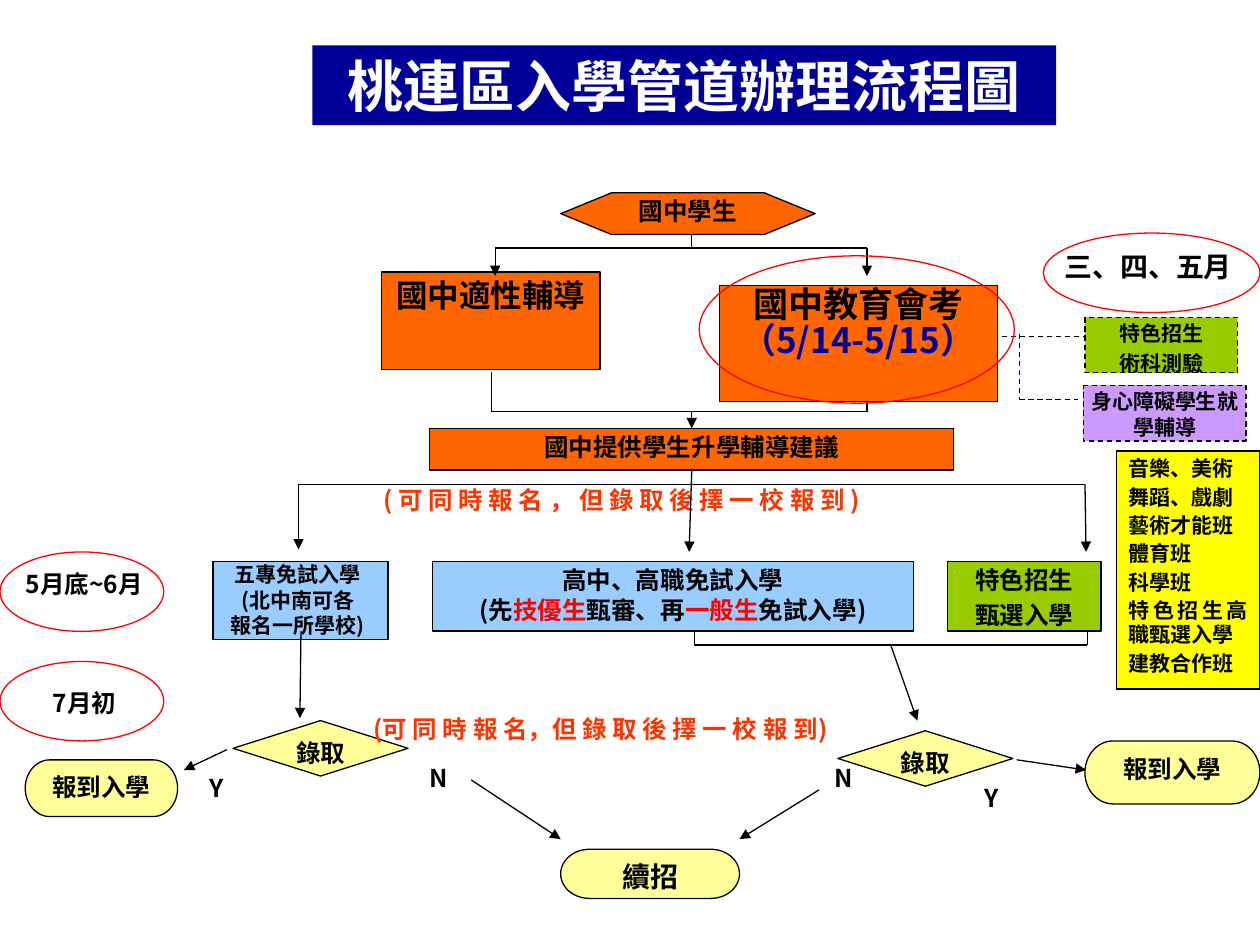
import pptx
import pptx.util
import pptx.dml.color
import pptx.enum.dml
import pptx.enum.shapes
import pptx.enum.text
import pptx.oxml
import pptx.oxml.ns
from typing import NamedTuple

Pt = pptx.util.Pt
Kind = pptx.enum.shapes.MSO_SHAPE
Align = pptx.enum.text.PP_ALIGN


class Theme:
    font = "Noto Sans CJK SC"
    head = "Calibri"
    black, white, navy = "000000", "FFFFFF", "000099"
    red, coral = "FF0000", "FF3300"
    orange, sky, cream = "FF6600", "99CCFF", "FFFF99"
    green, mauve, yellow = "99CC00", "CC99FF", "FFFF00"
    small, base, month, guide, exam, title = 12, 14, 16, 18, 20, 32
    line = 0.75


class Box(NamedTuple):
    kind: Kind
    x: float
    y: float
    w: float
    h: float
    fill: str
    text: str
    size: float = Theme.base
    color: str = Theme.black
    accent: str = Theme.red
    align: Align = Align.CENTER
    pads: tuple = (4, 2, 4, 2)
    space: float = 0.2
    lead: float = 1
    edge: bool = True
    dash: bool = False
    font: str = Theme.font


class Note(NamedTuple):
    x: float
    y: float
    w: float
    h: float
    text: str
    size: float = Theme.base
    color: str = Theme.black
    accent: str = Theme.red
    align: Align = Align.LEFT
    pads: tuple = (4, 2, 4, 2)
    space: float = 0
    lead: float = 1
    font: str = Theme.font


class Link(NamedTuple):
    x1: float
    y1: float
    x2: float
    y2: float
    tip: bool = False
    dash: bool = False


def tint(code: str) -> pptx.dml.color.RGBColor:
    return pptx.dml.color.RGBColor.from_string(code)


def stroke(line, color: str, dash: bool = False) -> None:
    line.color.rgb = tint(color)
    line.width = Pt(Theme.line)
    if dash:
        line.dash_style = pptx.enum.dml.MSO_LINE.DASH


def write(shape, item) -> None:
    frame = shape.text_frame
    frame.word_wrap = True
    frame.vertical_anchor = pptx.enum.text.MSO_ANCHOR.TOP
    (frame.margin_left, frame.margin_top,
     frame.margin_right, frame.margin_bottom) = map(Pt, item.pads)
    frame.text = item.text.replace("|", "")
    for row, (para, text) in enumerate(zip(frame.paragraphs, item.text.split("\n"))):
        para.alignment = item.align
        para.line_spacing = item.lead
        para.space_before = Pt(round(item.size * item.space, 1) if row else 0)
        parts = text.split("|")
        para.runs[0].text = parts[0] or parts[1]
        first = 0 if parts[0] else 1
        for part in filter(None, parts[first + 1:]):
            para.add_run().text = part
        for spot, run in enumerate(para.runs, first):
            run.font.size = Pt(item.size)
            run.font.bold = True
            run.font.name = item.font
            run.font.color.rgb = tint(item.accent if spot % 2 else item.color)
            face = pptx.oxml.parse_xml(
                f'<a:ea {pptx.oxml.ns.nsdecls("a")} typeface="{Theme.font}"/>')
            run.font._element.find(pptx.oxml.ns.qn("a:latin")).addnext(face)


def draw_box(slide, box: Box) -> None:
    shape = slide.shapes.add_shape(box.kind, *map(Pt, box[1:5]))
    shape.shadow.inherit = False
    shape.fill.solid()
    shape.fill.fore_color.rgb = tint(box.fill)
    if box.edge:
        stroke(shape.line, Theme.black, box.dash)
    else:
        shape.line.fill.background()
    write(shape, box)


def draw_note(slide, note: Note) -> None:
    write(slide.shapes.add_textbox(*map(Pt, note[:4])), note)


def draw_link(slide, link: Link) -> None:
    wire = slide.shapes.add_connector(
        pptx.enum.shapes.MSO_CONNECTOR.STRAIGHT, *map(Pt, link[:4]))
    stroke(wire.line, Theme.black, link.dash)
    space = pptx.oxml.ns.nsdecls("a")
    if link.tip:
        wire.line._get_or_add_ln().append(
            pptx.oxml.parse_xml(f'<a:tailEnd {space} type="triangle"/>'))
    wire._element.spPr.append(pptx.oxml.parse_xml(f"<a:effectLst {space}/>"))


def draw_ring(slide, *place: float) -> None:
    ring = slide.shapes.add_shape(Kind.OVAL, *map(Pt, place))
    ring.shadow.inherit = False
    ring.fill.background()
    stroke(ring.line, Theme.red)


RECT, STEP = Kind.RECTANGLE, Kind.FLOWCHART_PROCESS
END, TEST = Kind.FLOWCHART_TERMINATOR, Kind.FLOWCHART_DECISION
T = Theme
CLASSES = "音樂、美術\n舞蹈、戲劇\n藝術才能班\n體育班\n科學班\n特色招生高職甄選入學\n建教合作班"

BOXES = [
    Box(RECT, 178.5, 26, 425, 45.5, T.navy, "桃連區入學管道辦理流程圖", T.title, T.white,
        pads=(7, 3.6, 7, 3.6), edge=False, font=T.head),
    Box(Kind.FLOWCHART_PREPARATION, 320.4, 110.2, 145.4, 23.8, T.orange, "國中學生"),
    Box(STEP, 218.2, 155.5, 124.6, 55.5, T.orange, "國中適性輔導", T.guide),
    Box(STEP, 411, 163.2, 159, 66.2, T.orange, "國中教育會考\n|（5/14-5/15）|", T.exam,
        accent=T.navy, space=0, lead=0.85),
    Box(STEP, 245.5, 244.8, 299.5, 23.8, T.orange, "國中提供學生升學輔導建議"),
    Box(STEP, 121.7, 321, 100, 44.6, T.sky, "五專免試入學\n(北中南可各\n報名一所學校)", T.small,
        pads=(1, 2, 4, 2), lead=0.85),
    Box(STEP, 247, 321, 275, 39.6, T.sky,
        "高中、高職免試入學\n(先|技優生|甄審、再|一般生|免試入學)", space=0),
    Box(STEP, 541.4, 321, 87.8, 39.6, T.green, "特色招生\n甄選入學"),
    Box(RECT, 620, 181.4, 87.1, 31.7, T.green, "特色招生\n術科測驗", T.small,
        pads=(1, 2, 1, 2), dash=True),
    Box(STEP, 619, 220.3, 93, 31.7, T.mauve, "身心障礙學生就學輔導", T.small, dash=True),
    Box(RECT, 638, 257.8, 82, 136, T.yellow, CLASSES, T.small, align=Align.JUSTIFY,
        pads=(7.2, 3.6, 7.2, 3.6), lead=0.96),
    Box(TEST, 133.2, 411.8, 100, 31.7, T.cream, "錄取"),
    Box(TEST, 478.8, 417.6, 100, 31.7, T.cream, "錄取"),
    Box(END, 14.4, 434.2, 87.1, 32.4, T.cream, "報到入學"),
    Box(END, 620, 423.4, 100, 36, T.cream, "報到入學"),
    Box(END, 320.4, 485.3, 102.2, 28.1, T.cream, "續招", T.month),
]

NOTES = [
    Note(218.2, 275, 408, 24, "( 可 同 時 報 名 ， 但 錄 取 後 擇 一 校 報 到 )",
         color=T.coral, pads=(1, 2, 1, 2)),
    Note(212.4, 406, 325, 16, "(可 同 時 報 名，但 錄 取 後 擇 一 校 報 到)",
         color=T.coral, pads=(1, 2, 1, 2)),
    Note(0, 323, 96.5, 30, "5月底~6月", align=Align.CENTER),
    Note(0, 391, 96.5, 30, "7月初", align=Align.CENTER),
    Note(601.2, 139, 118.8, 26.6, "三、四、五月", T.month, pads=(7.2, 3.6, 7.2, 3.6)),
] + [Note(x, y, 25.2, 16, mark) for x, y, mark in (
    (115.9, 440, "Y"), (241.2, 434.2, "N"), (473, 434.2, "N"), (558.7, 445.7, "Y"))]

LINKS = [
    Link(395.3, 134, 395.3, 141.8), Link(283, 141.8, 495.4, 141.8),
    Link(283, 141.8, 283, 157.7, True), Link(495.4, 141.8, 495.4, 157.7, True),
    Link(280.8, 212.4, 280.8, 235.2), Link(495.4, 229, 495.4, 235.2),
    Link(280.8, 235.2, 495.4, 235.2), Link(395.3, 235.2, 395.3, 244.8, True),
    Link(170.6, 276.8, 620, 276.8), Link(170.6, 276.8, 170.6, 314, True),
    Link(395.3, 268.6, 393.8, 315.4, True), Link(620, 276.8, 620.6, 315.4, True),
    Link(172, 360.7, 171.4, 410.4, True),
    Link(396.7, 360.7, 396.7, 368.6), Link(621.4, 360.7, 621.4, 368.6),
    Link(396.7, 368.6, 621.4, 368.6), Link(509, 368.6, 524.2, 411.8, True),
    Link(129.6, 428.4, 105.1, 440, True), Link(581, 434.2, 620.6, 440, True),
    Link(269.3, 445.7, 320.4, 479.5, True), Link(468, 451.4, 422.6, 479.5, True),
    Link(572.5, 192.2, 620, 192.2, dash=True),
    Link(582.5, 190.8, 582.5, 228.2, dash=True),
    Link(582.5, 228.2, 616.3, 228.2, dash=True),
]

RINGS = [(0, 315.4, 93.6, 45.4), (0, 378, 93.6, 45.4),
         (399.6, 146.2, 180, 84.2), (596.2, 133.2, 123.8, 45.4)]


def main() -> None:
    deck = pptx.Presentation()
    deck.slide_width, deck.slide_height = Pt(720), Pt(540)
    slide = deck.slides.add_slide(deck.slide_layouts[6])
    for box in BOXES:
        draw_box(slide, box)
    for note in NOTES:
        draw_note(slide, note)
    for link in LINKS:
        draw_link(slide, link)
    for ring in RINGS:
        draw_ring(slide, *ring)
    deck.save("out.pptx")


if __name__ == "__main__":
    main()
